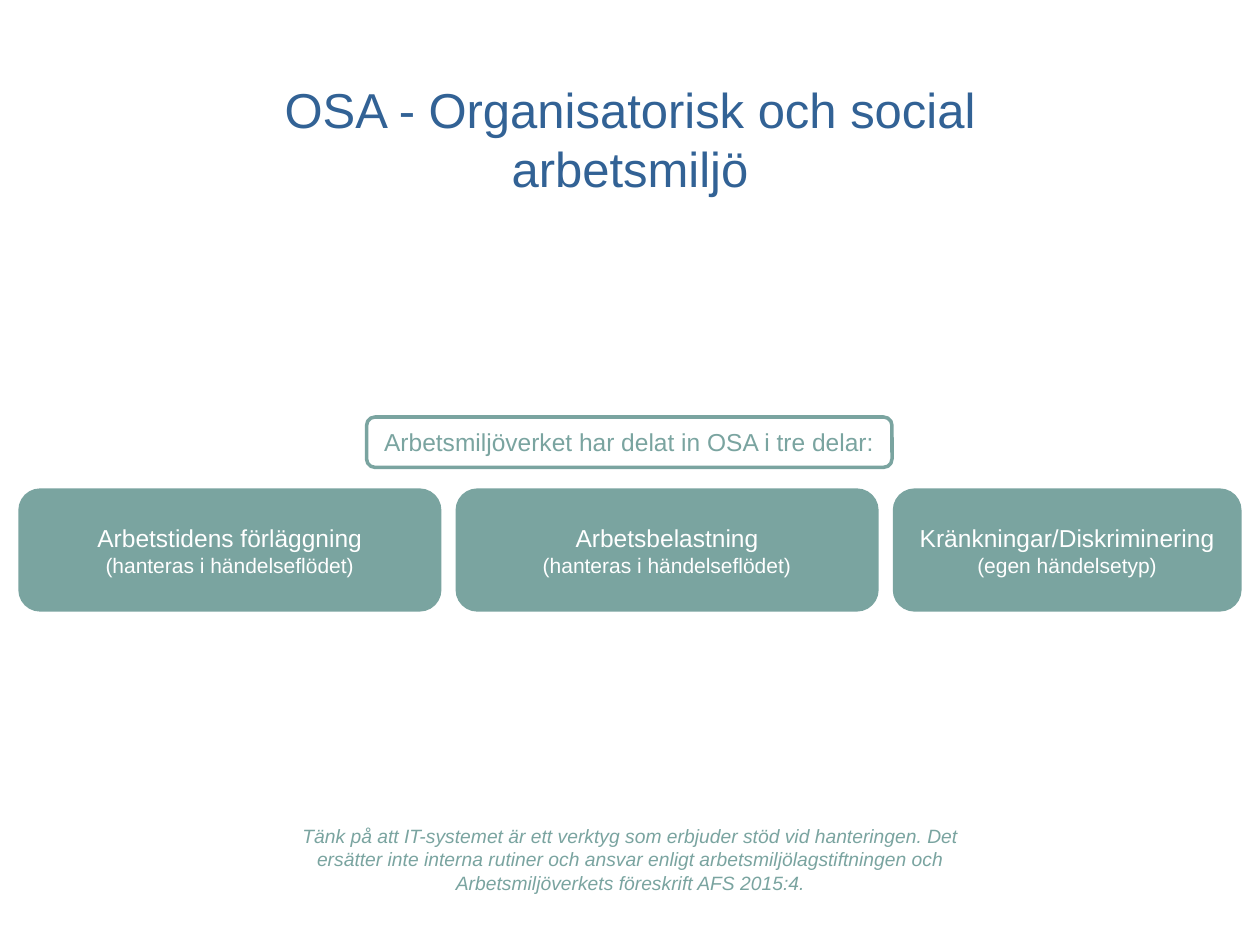
from pptx import Presentation
from pptx.dml.color import RGBColor
from pptx.enum.shapes import MSO_SHAPE
from pptx.enum.text import MSO_ANCHOR, MSO_AUTO_SIZE, PP_ALIGN
from pptx.util import Inches, Pt

ROUNDED = MSO_SHAPE.ROUNDED_RECTANGLE
TOP, MIDDLE = MSO_ANCHOR.TOP, MSO_ANCHOR.MIDDLE
CENTER = PP_ALIGN.CENTER
NO_AUTOFIT = MSO_AUTO_SIZE.NONE
COLORS = {"blue": "326295", "green": "7AA4A0", "white": "FFFFFF"}

# Content
TITLE = "OSA - Organisatorisk och social arbetsmiljö"
INTRO = "Arbetsmiljöverket har delat in OSA i tre delar:"
PARTS = [  # heading, note, box width
    ("Arbetstidens förläggning", "(hanteras i händelseflödet)", 3.33),
    ("Arbetsbelastning", "(hanteras i händelseflödet)", 3.33),
    ("Kränkningar/Diskriminering", "(egen händelsetyp)", 2.74),
]
REMINDER = (
    "Tänk på att IT-systemet är ett verktyg som erbjuder stöd vid hanteringen. "
    "Det ersätter inte interna rutiner och ansvar enligt "
    "arbetsmiljölagstiftningen och Arbetsmiljöverkets föreskrift AFS 2015:4."
)
PARTS_LEFT, PARTS_TOP, PARTS_HEIGHT, PARTS_GAP = 0.16, 3.89, 0.95, 0.14


def rgb(name):
    return RGBColor.from_string(COLORS[name])


def write(tf, lines, color, anchor=MIDDLE, italic=False):
    """Fill a text frame with centred (text, size) lines."""
    tf.word_wrap = True
    tf.auto_size = NO_AUTOFIT
    tf.vertical_anchor = anchor
    for i, (text, size) in enumerate(lines):
        p = tf.paragraphs[0] if i == 0 else tf.add_paragraph()
        p.text = text
        p.alignment = CENTER
        p.font.name = "Arial"
        p.font.size = Pt(size)
        p.font.italic = italic
        p.font.color.rgb = rgb(color)


def add_box(s, box, lines, fill, line, color, italic=False):
    sp = s.shapes.add_shape(ROUNDED, *map(Inches, box))
    sp.shadow.inherit = False
    sp.fill.solid()
    sp.fill.fore_color.rgb = rgb(fill)
    sp.line.color.rgb = rgb(line)
    sp.line.width = Pt(2)
    write(sp.text_frame, lines, color, italic=italic)


prs = Presentation()
prs.slide_width, prs.slide_height = Inches(10), Inches(7.5)
s = prs.slides.add_slide(prs.slide_layouts[5])

# Title
title = s.shapes.title
title.left, title.top, title.width, title.height = map(Inches, (1.77, 0.58, 6.46, 0.65))
write(title.text_frame, [(TITLE, 28)], "blue", anchor=TOP)

# Reminder at the foot
add_box(s, (2.09, 6.42, 5.83, 0.8), [(REMINDER, 11)], "white", "white", "green", italic=True)

# The three parts, side by side
left = PARTS_LEFT
for heading, note, width in PARTS:
    add_box(s, (left, PARTS_TOP, width, PARTS_HEIGHT), [(heading, 14), (note, 12)],
            "green", "green", "white")
    left += width + PARTS_GAP

# Intro above the parts
add_box(s, (2.91, 3.31, 4.17, 0.4), [(INTRO, 14)], "white", "green", "green")

prs.save("out.pptx")
